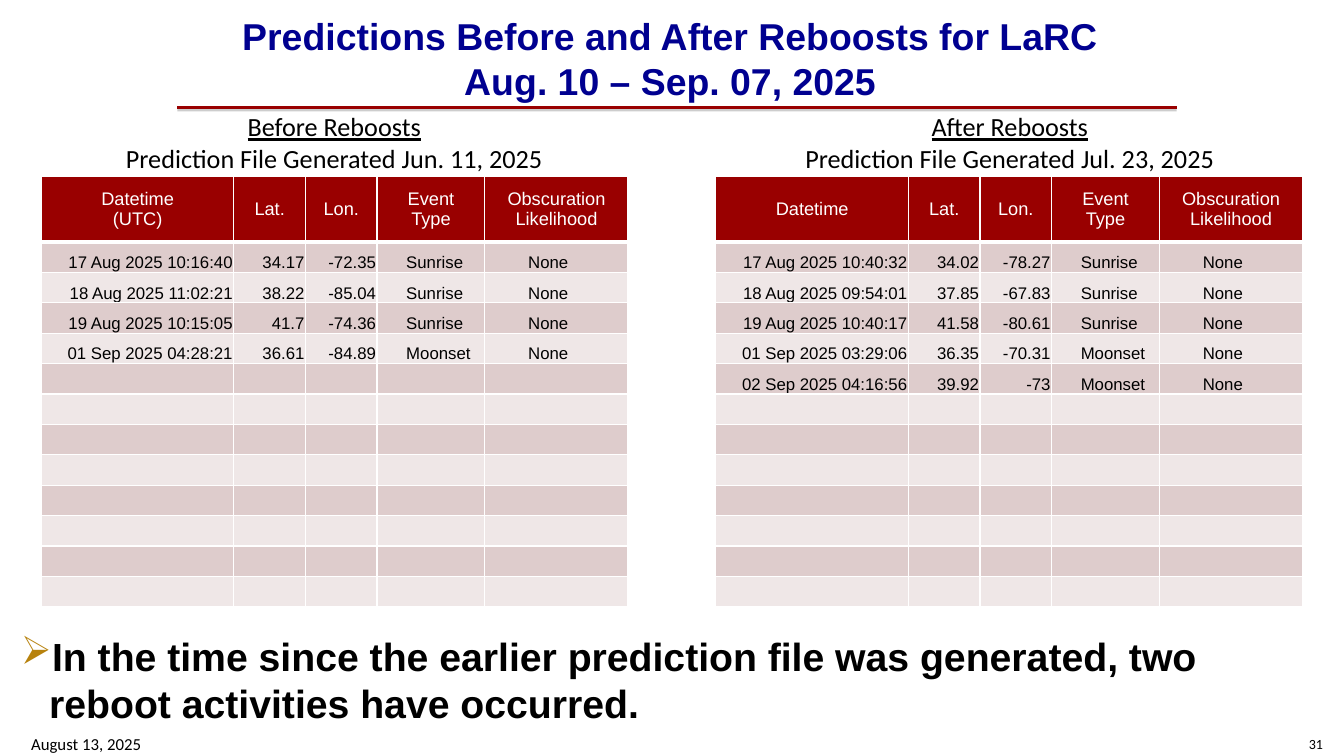
from lxml.etree import SubElement
from pptx import Presentation
from pptx.dml.color import RGBColor
from pptx.enum.shapes import MSO_CONNECTOR
from pptx.enum.text import MSO_ANCHOR, PP_ALIGN
from pptx.oxml.ns import qn
from pptx.util import Inches, Pt

BLACK, WHITE, NAVY, RED = "000000", "FFFFFF", "000090", "990000"
BANDS = ("DECCCC", "EFE7E7")
COLUMN_WIDTHS = (1.91, 0.71, 0.71, 1.07, 1.42)
HEADER_HEIGHT = 0.65
BODY_ROWS = 12
HEADINGS = ("Lat.", "Lon.", "Event Type", "Obscuration Likelihood")
HEADER_FORMAT = {"size": 13, "font": "Arial", "color": WHITE, "align": PP_ALIGN.CENTER}
BODY_FORMAT = {"size": 12, "font": "Arial", "color": BLACK}
HEADER_MARGINS = {"left": 0.13, "top": 0.07, "right": 0.13, "bottom": 0.07}
BODY_MARGINS = {"left": 0.01, "top": 0.01, "right": 0.01, "bottom": 0}
BODY_INDENTS = {3: 0.29, 4: 0.43}

BEFORE_EVENTS = (
    ("17 Aug 2025 10:16:40", "34.17", "-72.35", "Sunrise", "None"),
    ("18 Aug 2025 11:02:21", "38.22", "-85.04", "Sunrise", "None"),
    ("19 Aug 2025 10:15:05", "41.7", "-74.36", "Sunrise", "None"),
    ("01 Sep 2025 04:28:21", "36.61", "-84.89", "Moonset", "None"),
)
AFTER_EVENTS = (
    ("17 Aug 2025 10:40:32", "34.02", "-78.27", "Sunrise", "None"),
    ("18 Aug 2025 09:54:01", "37.85", "-67.83", "Sunrise", "None"),
    ("19 Aug 2025 10:40:17", "41.58", "-80.61", "Sunrise", "None"),
    ("01 Sep 2025 03:29:06", "36.35", "-70.31", "Moonset", "None"),
    ("02 Sep 2025 04:16:56", "39.92", "-73", "Moonset", "None"),
)


def rgb(color):
    """Turn a hex string into a colour."""
    return RGBColor.from_string(color)


def write(paragraph, text, size, font, color, align=PP_ALIGN.LEFT, bold=False, underline=False):
    """Fill a paragraph with formatted text."""
    paragraph.text = text
    paragraph.alignment = align
    values = {"size": Pt(size), "name": font, "bold": bold, "underline": underline}
    for run in paragraph.runs:
        for name, value in values.items():
            setattr(run.font, name, value)
        run.font.color.rgb = rgb(color)
    for line_break in paragraph._p.findall(qn("a:br")):
        SubElement(line_break, qn("a:rPr"), sz=str(size * 100 // 1).split(".")[0])
    if not text:
        SubElement(paragraph._p, qn("a:endParaRPr"), sz=str(size * 100))


def add_text_box(slide, box, anchor=MSO_ANCHOR.TOP):
    """Add a wrapping text box and return its text frame."""
    frame = slide.shapes.add_textbox(*map(Inches, box)).text_frame
    frame.word_wrap = True
    frame.vertical_anchor = anchor
    return frame


def add_line_text(slide, box, text, **formats):
    """Add a vertically centred box with one paragraph."""
    frame = add_text_box(slide, box, MSO_ANCHOR.MIDDLE)
    write(frame.paragraphs[0], text, **formats)


def add_title_rule(slide, left, top, width):
    """Draw the shadowed red rule under the title."""
    rule = slide.shapes.add_connector(
        MSO_CONNECTOR.STRAIGHT, *map(Inches, (left, top, left + width, top)))
    rule.line.color.rgb = rgb(RED)
    rule.line.width = Pt(2)
    effects = SubElement(rule._element.spPr, qn("a:effectLst"))
    shadow = SubElement(effects, qn("a:outerShdw"), blurRad="0", dist=str(Pt(1.6)),
                        dir="5400000", rotWithShape="0")
    color = SubElement(shadow, qn("a:srgbClr"), val="808080")
    SubElement(color, qn("a:alpha"), val="38000")


def style_cell(cell, fill, margins, anchor, bottom_width=1):
    """Set the borders, fill, margins and anchor of a cell."""
    properties = cell._tc.get_or_add_tcPr()
    for side, width in (("L", 1), ("R", 1), ("T", 1), ("B", bottom_width)):
        border = SubElement(properties, qn(f"a:ln{side}"), w=str(Pt(width)))
        SubElement(SubElement(border, qn("a:solidFill")), qn("a:srgbClr"), val=WHITE)
    cell.fill.solid()
    cell.fill.fore_color.rgb = rgb(fill)
    cell.vertical_anchor = anchor
    for side, margin in margins.items():
        setattr(cell, f"margin_{side}", Inches(margin))


def add_event_table(slide, left, top, width, height, first_heading, events):
    """Add a table of predicted events."""
    table = slide.shapes.add_table(
        BODY_ROWS + 1, len(COLUMN_WIDTHS), *map(Inches, (left, top, width, height))).table
    table.horz_banding = False
    for column, column_width in zip(table.columns, COLUMN_WIDTHS):
        column.width = Inches(column_width)
    for row in table.rows:
        row.height = Inches((height - HEADER_HEIGHT) / BODY_ROWS)
    table.rows[0].height = Inches(HEADER_HEIGHT)

    for column, heading in enumerate((first_heading, *HEADINGS)):
        cell = table.cell(0, column)
        style_cell(cell, RED, HEADER_MARGINS, MSO_ANCHOR.MIDDLE, bottom_width=3)
        write(cell.text_frame.paragraphs[0], heading, **HEADER_FORMAT)

    for row in range(BODY_ROWS):
        values = events[row] if row < len(events) else [""] * len(COLUMN_WIDTHS)
        for column, value in enumerate(values):
            cell = table.cell(row + 1, column)
            margins = {**BODY_MARGINS, "left": BODY_INDENTS.get(column, 0.01)}
            style_cell(cell, BANDS[row % 2], margins, MSO_ANCHOR.BOTTOM)
            align = PP_ALIGN.LEFT if column in BODY_INDENTS else PP_ALIGN.RIGHT
            write(cell.text_frame.paragraphs[0], value, align=align, **BODY_FORMAT)


def add_prediction(slide, left, top, caption_shift, caption, generated, first_heading, events):
    """Add a caption and the event table below it."""
    frame = add_text_box(slide, (left + caption_shift, top, 5.89, 0.73))
    formats = {"size": 18.7, "font": "Calibri", "color": BLACK, "align": PP_ALIGN.CENTER}
    write(frame.paragraphs[0], caption, underline=True, **formats)
    write(frame.add_paragraph(), f"Prediction File Generated {generated}", **formats)
    add_event_table(slide, left, top + 0.7, 5.83, 4.27, first_heading, events)


def add_conclusion(slide, box, text):
    """Add the bulleted closing statement."""
    paragraph = add_text_box(slide, box).paragraphs[0]
    properties = paragraph._p.get_or_add_pPr()
    properties.set("marL", str(Inches(0.28)))
    properties.set("indent", str(Inches(-0.28)))
    SubElement(SubElement(properties, qn("a:buClr")), qn("a:srgbClr"), val="B7820D")
    SubElement(properties, qn("a:buChar"), char="➢")
    write(paragraph, text, 28, "Arial", BLACK, bold=True)


def main():
    """Build and save the slide."""
    presentation = Presentation()
    presentation.slide_width = Inches(13.33)
    presentation.slide_height = Inches(7.5)
    slide = presentation.slides.add_slide(presentation.slide_layouts[6])
    add_title_rule(slide, 1.76, 1.07, 9.91)
    add_line_text(slide, (1.78, 0.22, 9.74, 0.71),
                  "Predictions Before and After Reboosts for LaRC\vAug. 10 – Sep. 07, 2025",
                  size=26.7, font="Arial", color=NAVY, align=PP_ALIGN.CENTER, bold=True)
    add_prediction(slide, 0.41, 1.05, -0.04, "Before Reboosts", "Jun. 11, 2025",
                   "Datetime\v(UTC)", BEFORE_EVENTS)
    add_prediction(slide, 7.1, 1.05, -0.03, "After Reboosts", "Jul. 23, 2025",
                   "Datetime", AFTER_EVENTS)
    add_conclusion(slide, (0.11, 6.22, 13.11, 1.11),
                   "In the time since the earlier prediction file was generated, "
                   "two reboot activities have occurred.")
    add_line_text(slide, (0.21, 7.25, 3.11, 0.25), "August 13, 2025",
                  size=12, font="Calibri", color=BLACK)
    add_line_text(slide, (10.11, 7.25, 3.11, 0.25), "31",
                  size=10, font="Calibri", color=BLACK, align=PP_ALIGN.RIGHT)
    presentation.save("out.pptx")


if __name__ == "__main__":
    main()
